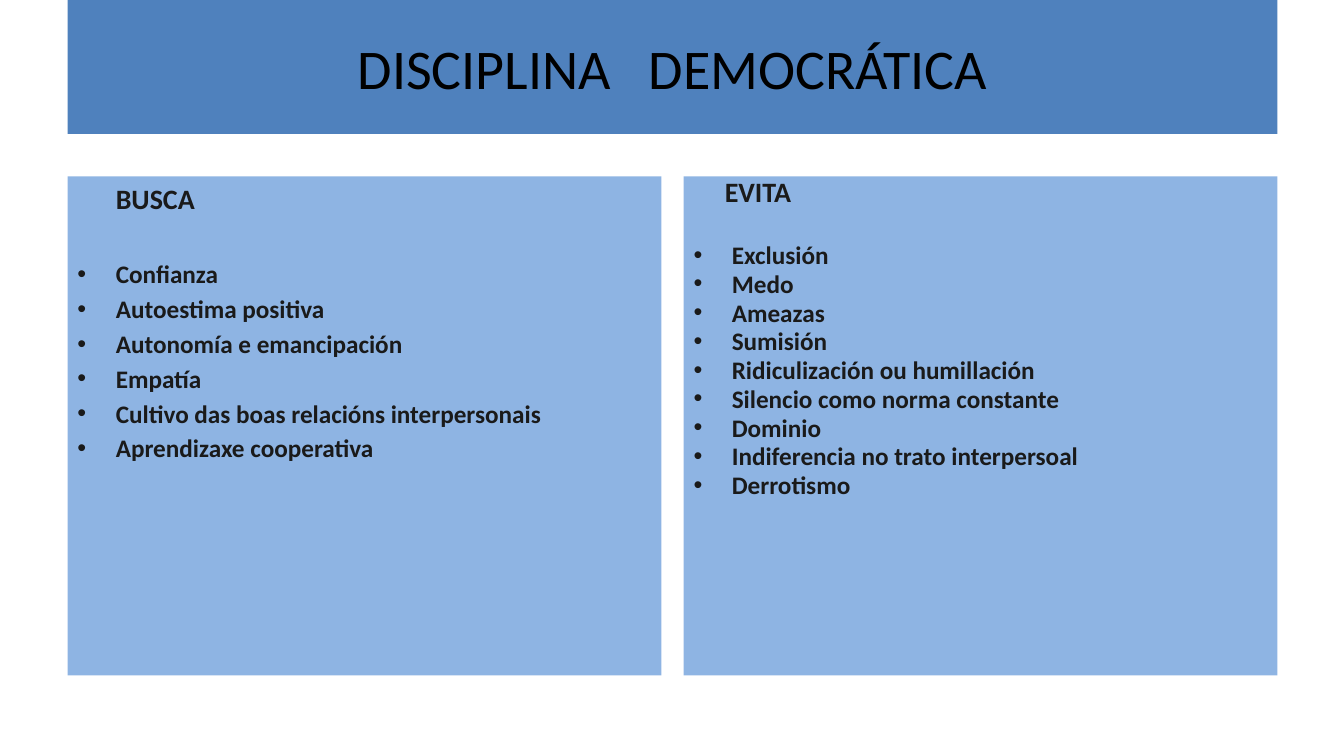
import pptx
import pptx.dml.color
import pptx.enum.shapes
import pptx.enum.text
import pptx.util
from lxml import etree
from pptx.util import Inches, Pt

# Content
TITLE = "DISCIPLINA   DEMOCRÁTICA"
PANELS = [
    {"heading": "BUSCA", "indent": 0.38, "line": 1.0, "gap": 31.2,
     "items": ["Confianza", "Autoestima positiva", "Autonomía e emancipación",
               "Empatía", "Cultivo das boas relacións interpersonais",
               "Aprendizaxe cooperativa"]},
    {"heading": "EVITA", "indent": 0.31, "line": 0.8, "gap": 26.4,
     "items": ["Exclusión", "Medo", "Ameazas", "Sumisión",
               "Ridiculización ou humillación", "Silencio como norma constante",
               "Dominio", "Indiferencia no trato interpersoal", "Derrotismo"]},
]

THEME = {"font": "Calibri", "banner": "4F81BD", "panel": "8EB4E3",
         "title": "000000", "text": "1A1A1A",
         "title_size": 40, "heading_size": 20, "item_size": 18}

# Layout, in inches
SLIDE_W, SLIDE_H = 13.33, 7.5
MARGIN, GUTTER = 0.67, 0.22
CONTENT_W = 12
BANNER_H = 1.33
PANEL_TOP, PANEL_H = 1.75, 4.95
PANEL_W = (CONTENT_W - GUTTER) / 2
HANG = 0.38
ITEM_GAP = 3.25  # points

ALIGN = pptx.enum.text.PP_ALIGN
ANCHOR = pptx.enum.text.MSO_ANCHOR


def rgb(name):
    return pptx.dml.color.RGBColor.from_string(THEME[name])


def add_block(s, x, y, w, h, fill, anchor):
    sp = s.shapes.add_shape(pptx.enum.shapes.MSO_SHAPE.RECTANGLE,
                            Inches(x), Inches(y), Inches(w), Inches(h))
    sp.shadow.inherit = False
    sp.fill.solid()
    sp.fill.fore_color.rgb = rgb(fill)
    sp.line.fill.background()
    tf = sp.text_frame
    tf.word_wrap = True
    tf.vertical_anchor = anchor
    return tf


def write(tf, text, size, color="text", bold=True, align=ALIGN.LEFT,
          before=0, line=1.0, indent=0, bullet=False):
    p = tf.paragraphs[0] if not tf.text else tf.add_paragraph()
    p.alignment = align
    p.space_before = Pt(before)
    p.line_spacing = line
    pPr = p._p.get_or_add_pPr()
    pPr.set("marL", str(Inches(indent)))
    pPr.set("indent", str(-Inches(indent) if bullet else 0))
    if bullet:
        ns = pptx.oxml.ns.qn
        etree.SubElement(pPr, ns("a:buFont")).set("typeface", "Arial")
        etree.SubElement(pPr, ns("a:buChar")).set("char", "•")
    r = p.add_run()
    r.text = text
    r.font.name = THEME["font"]
    r.font.size = Pt(THEME[size])
    r.font.bold = bold
    r.font.color.rgb = rgb(color)


def main():
    prs = pptx.Presentation()
    prs.slide_width, prs.slide_height = Inches(SLIDE_W), Inches(SLIDE_H)
    s = prs.slides.add_slide(prs.slide_layouts[6])

    # Title banner
    tf = add_block(s, MARGIN, 0, CONTENT_W, BANNER_H, "banner", ANCHOR.MIDDLE)
    write(tf, TITLE, "title_size", color="title", bold=False, align=ALIGN.CENTER)

    # Two panels side by side
    for i, panel in enumerate(PANELS):
        x = MARGIN + i * (PANEL_W + GUTTER)
        tf = add_block(s, x, PANEL_TOP, PANEL_W, PANEL_H, "panel", ANCHOR.TOP)
        write(tf, panel["heading"], "heading_size",
              line=panel["line"], indent=panel["indent"])
        for n, item in enumerate(panel["items"]):
            write(tf, item, "item_size", before=ITEM_GAP if n else panel["gap"],
                  line=panel["line"], indent=HANG, bullet=True)

    prs.save("out.pptx")


if __name__ == "__main__":
    main()
